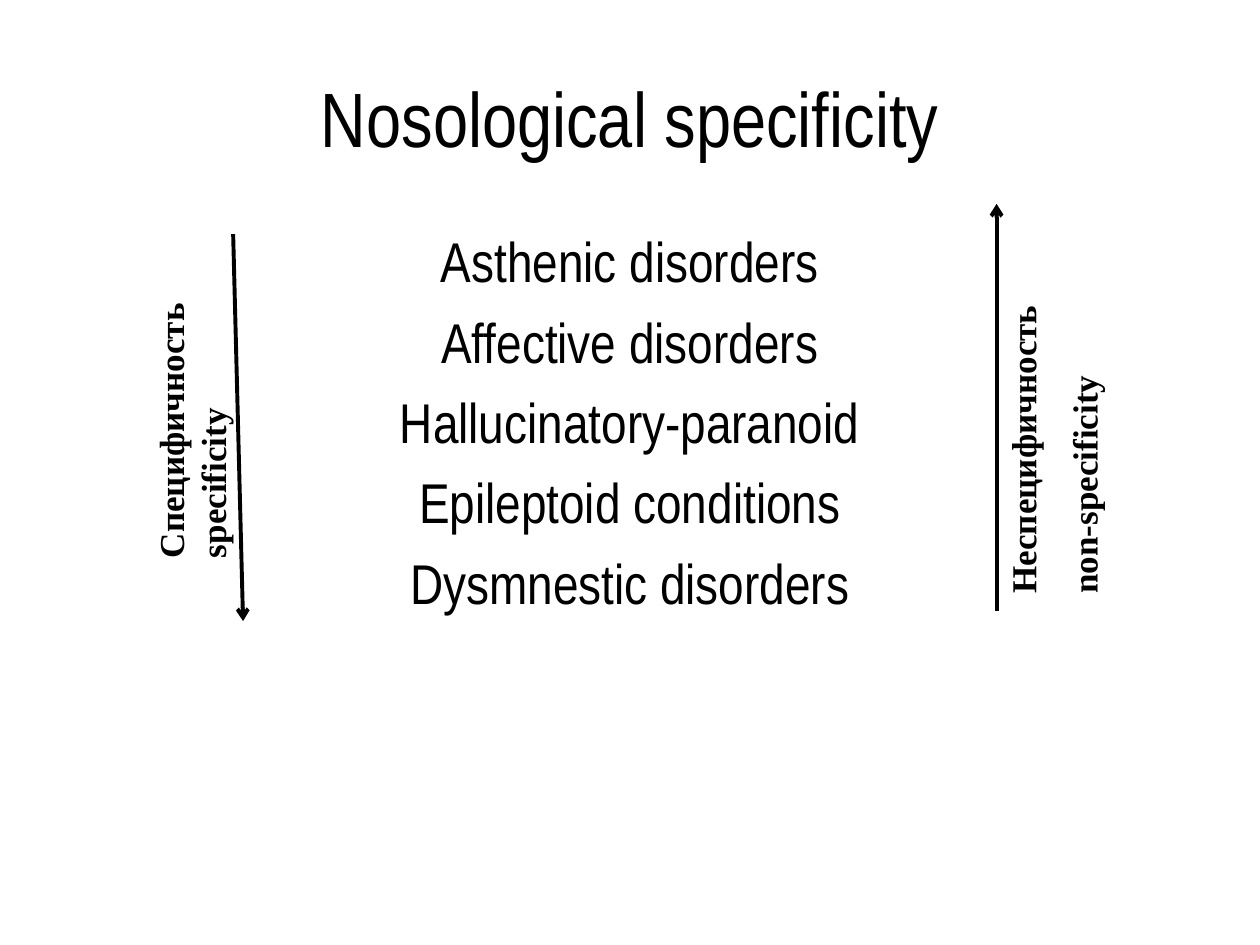
import pptx
import pptx.util
import pptx.dml.color
import pptx.enum.shapes
import pptx.enum.text
import pptx.oxml.ns
from lxml import etree

Cm, Pt = pptx.util.Cm, pptx.util.Pt
ALIGN = pptx.enum.text.PP_ALIGN
ANCHOR = pptx.enum.text.MSO_ANCHOR
BLACK = pptx.dml.color.RGBColor(0, 0, 0)
SANS, SERIF = "Arial Narrow", "Times New Roman"

# Content: places are left, top, width, height in cm
TITLE = "Nosological specificity"
LIST = [
    "Asthenic disorders",
    "Affective disorders",
    "Hallucinatory-paranoid",
    "Epileptoid conditions",
    "Dysmnestic disorders",
]
LABELS = [  # lines, place, wrap, gap in points
    (["Специфичность", "specificity"], (0.99, 7.65, 5.74, 1.96), False, 0),
    (["Неспецифичность", "non-specificity"], (17.65, 7.42, 7.21, 2.39), True, 11),
]
ARROWS = [  # x and y of start, then of end
    (4.7, 4.72, 4.9, 12.52),
    (20.09, 12.32, 20.09, 4.11),
]


def write(frame, lines, face, size, align, gap=0, bold=False):
    for i, line in enumerate(lines):
        para = frame.paragraphs[0] if i == 0 else frame.add_paragraph()
        para.text = line
        para.alignment = align
        para.space_before = Pt(gap if i else 0)
        font = para.font
        font.name, font.size, font.bold = face, Pt(size), bold
        font.color.rgb = BLACK


def add_box(slide, place, wrap=True):
    box = slide.shapes.add_textbox(*map(Cm, place))
    box.text_frame.word_wrap = wrap
    return box


def add_arrow(slide, ends):
    kind = pptx.enum.shapes.MSO_CONNECTOR.STRAIGHT
    arrow = slide.shapes.add_connector(kind, *map(Cm, ends))
    arrow.line.color.rgb = BLACK
    arrow.line.width = Pt(2.25)
    qn = pptx.oxml.ns.qn
    etree.SubElement(arrow.line._get_or_add_ln(), qn("a:tailEnd"), type="arrow")
    etree.SubElement(arrow._element.spPr, qn("a:effectLst"))


def main():
    deck = pptx.Presentation()
    deck.slide_width, deck.slide_height = Cm(25.4), Cm(19.05)
    slide = deck.slides.add_slide(deck.slide_layouts[5])

    # Title
    title = slide.shapes.title
    title.left, title.top, title.width, title.height = map(
        Cm, (1.27, 0.76, 22.86, 3.18))
    title.text_frame.auto_size = pptx.enum.text.MSO_AUTO_SIZE.NONE
    title.text_frame.vertical_anchor = ANCHOR.MIDDLE
    write(title.text_frame, [TITLE], SANS, 44, ALIGN.CENTER)

    # Centred list
    body = add_box(slide, (1.27, 4.45, 22.86, 12.57))
    write(body.text_frame, LIST, SANS, 32, ALIGN.CENTER, 7.5)

    # Arrows and their upright labels
    for ends in ARROWS:
        add_arrow(slide, ends)
    for lines, place, wrap, gap in LABELS:
        label = add_box(slide, place, wrap)
        label.rotation = 270
        write(label.text_frame, lines, SERIF, 20, ALIGN.LEFT, gap, True)

    deck.save("out.pptx")


if __name__ == "__main__":
    main()
